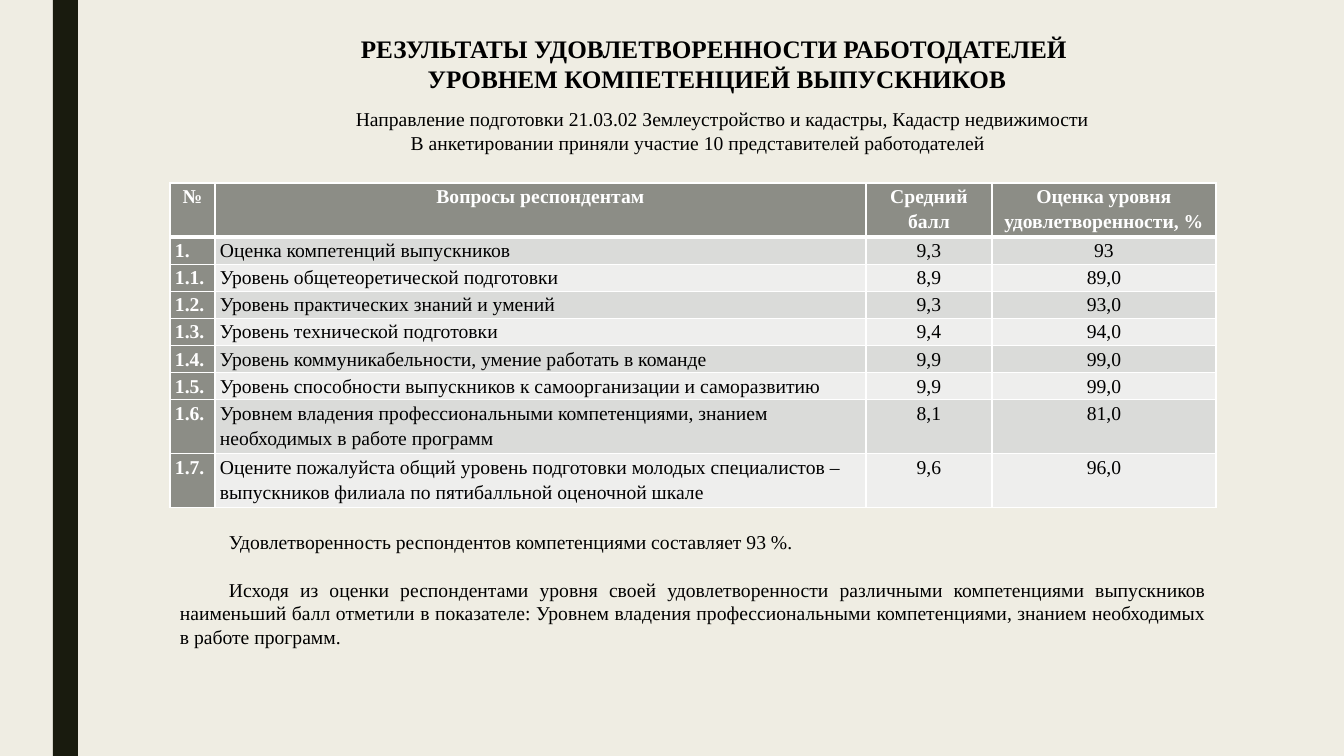
"""Build the slide on employers' satisfaction with graduates' competencies."""
from lxml import etree
from pptx import Presentation, util as u
from pptx.dml.color import RGBColor
from pptx.enum import shapes, text
from pptx.oxml.ns import qn

PX = 914400 / 100.8
FONT = "Times New Roman"
CENTER, JUSTIFY, LEFT = text.PP_ALIGN.CENTER, text.PP_ALIGN.JUSTIFY, text.PP_ALIGN.LEFT


def px(*lengths):
    return [u.Emu(round(length * PX)) for length in lengths]


def write(frame, words, size=14, color="000000", bold=False, align=CENTER,
          indent=0, spacing=None, after=0):
    para = frame.paragraphs[0]
    if para.runs:
        para = frame.add_paragraph()
    para.alignment = align
    para.line_spacing = spacing
    para.space_after = px(after)[0]
    if indent:
        para._p.get_or_add_pPr().set("indent", str(px(indent)[0]))
    span = para.add_run()
    span.text = words
    span.font.name, span.font.size, span.font.bold = FONT, u.Pt(size), bold
    span.font.color.rgb = RGBColor.from_string(color)


deck = Presentation()
deck.slide_width, deck.slide_height = px(1344, 756)
page = deck.slides.add_slide(deck.slide_layouts[6])
page.background.fill.solid()
page.background.fill.fore_color.rgb = RGBColor.from_string("EFEDE3")

bar = page.shapes.add_shape(shapes.MSO_SHAPE.RECTANGLE, *px(53, 0, 25, 756))
bar.shadow.inherit = False
bar.fill.solid()
bar.fill.fore_color.rgb = RGBColor.from_string("191B0E")
bar.line.fill.background()

text_boxes = [
    ((14, 28, 1406, 72), [
        ("РЕЗУЛЬТАТЫ УДОВЛЕТВОРЕННОСТИ РАБОТОДАТЕЛЕЙ ", dict(size=18, bold=True)),
        ("УРОВНЕМ КОМПЕТЕНЦИЕЙ ВЫПУСКНИКОВ", dict(size=18, bold=True)),
    ]),
    ((150, 102, 1047, 58), [
        ("Направление подготовки 21.03.02 Землеустройство и кадастры, Кадастр недвижимости",
         dict(indent=98)),
        ("В анкетировании приняли участие 10 представителей работодателей", dict(indent=49)),
    ]),
    ((170, 525, 1046, 129), [
        ("Удовлетворенность респондентов компетенциями составляет 93 %.",
         dict(align=JUSTIFY, indent=49, after=24)),
        ("Исходя из оценки респондентами уровня своей удовлетворенности различными "
         "компетенциями выпускников наименьший балл отметили в показателе: Уровнем владения "
         "профессиональными компетенциями, знанием необходимых в работе программ.",
         dict(align=JUSTIFY, indent=49)),
    ]),
]
for place, lines in text_boxes:
    box = page.shapes.add_textbox(*px(*place))
    box.text_frame.word_wrap = True
    for words, look in lines:
        write(box.text_frame, words, **look)

rows = [
    ("№", "Вопросы респондентам", "Средний балл", "Оценка уровня удовлетворенности, %"),
    ("1.", "Оценка компетенций выпускников", "9,3", "93"),
    ("1.1.", "Уровень общетеоретической подготовки", "8,9", "89,0"),
    ("1.2.", "Уровень практических знаний и умений", "9,3", "93,0"),
    ("1.3.", "Уровень технической подготовки", "9,4", "94,0"),
    ("1.4.", "Уровень коммуникабельности, умение работать в команде", "9,9", "99,0"),
    ("1.5.", "Уровень способности выпускников к самоорганизации и саморазвитию", "9,9", "99,0"),
    ("1.6.", "Уровнем владения профессиональными компетенциями, знанием необходимых "
     "в работе программ", "8,1", "81,0"),
    ("1.7.", "Оцените пожалуйста общий уровень подготовки молодых специалистов – "
     "выпускников филиала по пятибалльной оценочной шкале", "9,6", "96,0"),
]
widths = px(45, 651, 126, 224)
heights = px(54, *[27] * 6, 54, 54)
table = page.shapes.add_table(len(rows), len(widths), *px(170, 183, 1046, 324)).table
table.first_col = True
for column, width in zip(table.columns, widths):
    column.width = width
for r, (values, height) in enumerate(zip(rows, heights)):
    table.rows[r].height = height
    for c, value in enumerate(values):
        cell = table.cell(r, c)
        heading = r == 0 or c == 0
        cell.margin_left, cell.margin_right, cell.margin_top, cell.margin_bottom = px(5, 5, 0, 0)
        cell.fill.solid()
        band = "DADBD9" if r % 2 else "EEEEED"
        cell.fill.fore_color.rgb = RGBColor.from_string("8C8D86" if heading else band)
        write(cell.text_frame, value, color="FFFFFF" if heading else "000000", bold=heading,
              align=LEFT if r and c < 2 else CENTER, spacing=1.15)
        borders = {"lnL": 1, "lnR": 1, "lnT": 3 if r == 1 else 1, "lnB": 3 if r == 0 else 1}
        for position, (side, weight) in enumerate(borders.items()):
            line = etree.Element(qn(f"a:{side}"), w=str(u.Pt(weight)))
            paint = etree.SubElement(line, qn("a:solidFill"))
            etree.SubElement(paint, qn("a:srgbClr"), val="FFFFFF")
            cell._tc.get_or_add_tcPr().insert(position, line)

deck.save("out.pptx")
